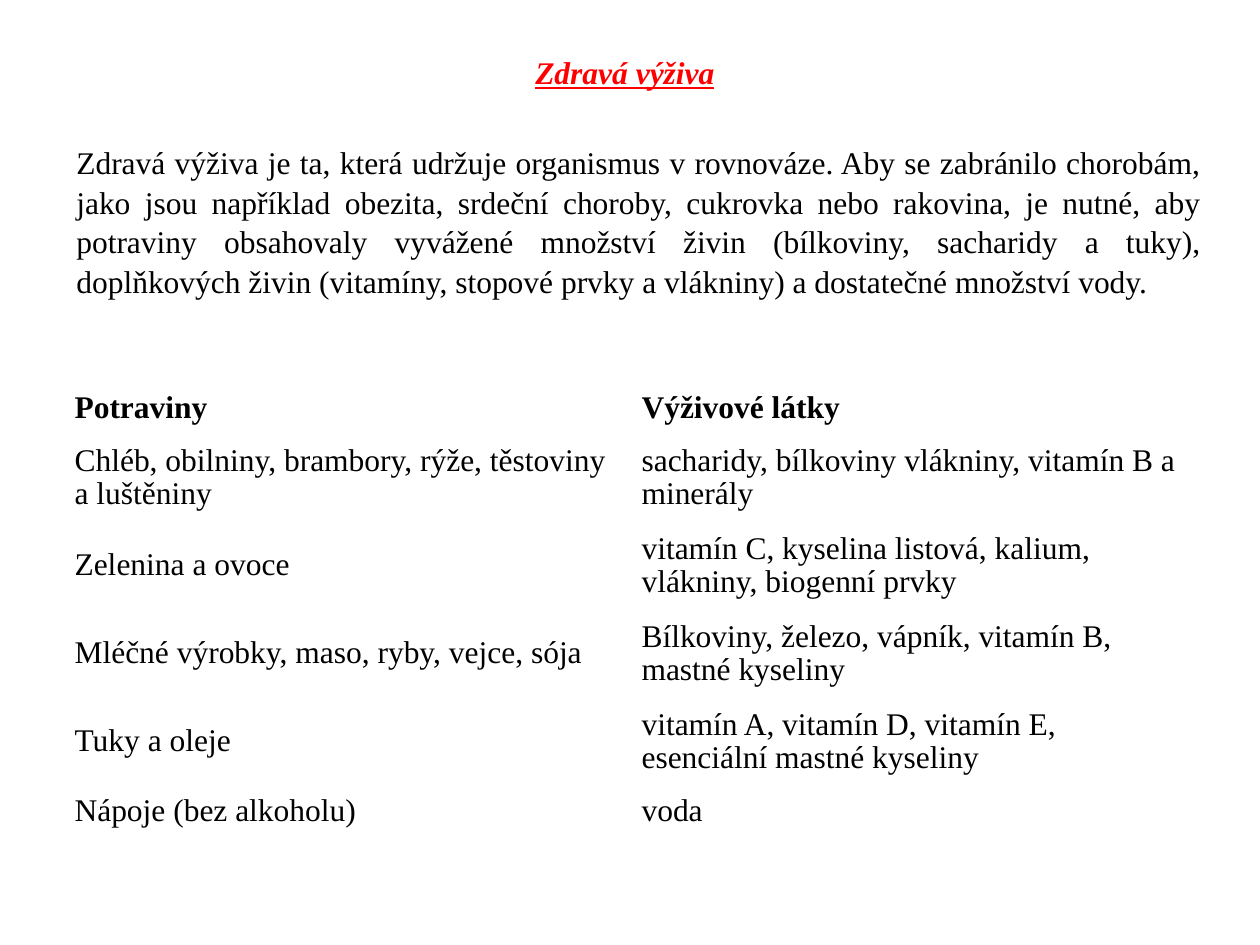
from pptx import Presentation
from pptx import util as u
from pptx.dml.color import RGBColor
from pptx.enum import text

PX = 914400 // 126
FONT = "Times New Roman"
RED = RGBColor(255, 0, 0)
BLACK = RGBColor(0, 0, 0)

INTRO = (
    "Zdravá výživa je ta, která udržuje organismus v rovnováze. "
    "Aby se zabránilo chorobám, jako jsou například obezita, srdeční choroby, "
    "cukrovka nebo rakovina, je nutné, aby potraviny obsahovaly vyvážené "
    "množství živin (bílkoviny, sacharidy a tuky), doplňkových živin "
    "(vitamíny, stopové prvky a vlákniny) a dostatečné množství vody. "
)
# Row height in px, food, nutrients
FOOD_ROWS = [
    (51, "Potraviny", "Výživové látky"),
    (88, "Chléb, obilniny, brambory, rýže, těstoviny a luštěniny",
     "sacharidy, bílkoviny vlákniny, vitamín B a minerály"),
    (88, "Zelenina a ovoce",
     "vitamín C, kyselina listová, kalium, vlákniny, biogenní prvky"),
    (88, "Mléčné výrobky, maso, ryby, vejce, sója",
     "Bílkoviny, železo, vápník, vitamín B, mastné kyseliny"),
    (88, "Tuky a oleje",
     "vitamín A, vitamín D, vitamín E, esenciální mastné kyseliny"),
    (51, "Nápoje (bez alkoholu)", "voda"),
]


def px(length):
    return u.Emu(length * PX)


def write(frame, words, align, spacing, color=BLACK, bold=False,
          italic=False, underline=False):
    paragraph = frame.paragraphs[0]
    paragraph.alignment = align
    paragraph.line_spacing = spacing
    run = paragraph.add_run()
    run.text = words
    font = run.font
    font.name, font.size = FONT, u.Pt(18)
    font.color.rgb = color
    font.bold, font.italic, font.underline = bold, italic, underline


def add_text(slide, left, top, width, height, words, align, **style):
    box = slide.shapes.add_textbox(px(left), px(top), px(width), px(height))
    box.text_frame.word_wrap = True
    write(box.text_frame, words, align, 1.05, **style)


def add_food_table(slide, left, top, column_width):
    total = sum(row[0] for row in FOOD_ROWS)
    table = slide.shapes.add_table(
        len(FOOD_ROWS), 2, px(left), px(top), px(2 * column_width), px(total)
    ).table
    table.first_row = table.horz_banding = False
    for index, (height, *words) in enumerate(FOOD_ROWS):
        table.rows[index].height = px(height)
        for column, content in enumerate(words):
            cell = table.cell(index, column)
            cell.fill.background()
            cell.vertical_anchor = text.MSO_ANCHOR.MIDDLE
            cell.margin_top = cell.margin_bottom = px(6)
            write(cell.text_frame, content, text.PP_ALIGN.LEFT, 0.95,
                  bold=index == 0)
    # Plain grid: the "No Style, No Grid" table style draws no borders
    style = table._tbl.tblPr.find(
        "{http://schemas.openxmlformats.org/drawingml/2006/main}tableStyleId")
    style.text = "{2D5ABB26-0587-4C30-8999-92F81FD0307C}"


def main():
    presentation = Presentation()
    presentation.slide_width, presentation.slide_height = px(1260), px(945)
    slide = presentation.slides.add_slide(presentation.slide_layouts[6])

    # Title and introduction
    add_text(slide, 223, 45, 804, 50, "Zdravá výživa", text.PP_ALIGN.CENTER,
             color=RED, bold=True, italic=True, underline=True)
    add_text(slide, 64, 135, 1150, 165, INTRO, text.PP_ALIGN.JUSTIFY)

    # Foods and their nutrients
    add_food_table(slide, 62, 383, 567)

    presentation.save("out.pptx")


if __name__ == "__main__":
    main()
